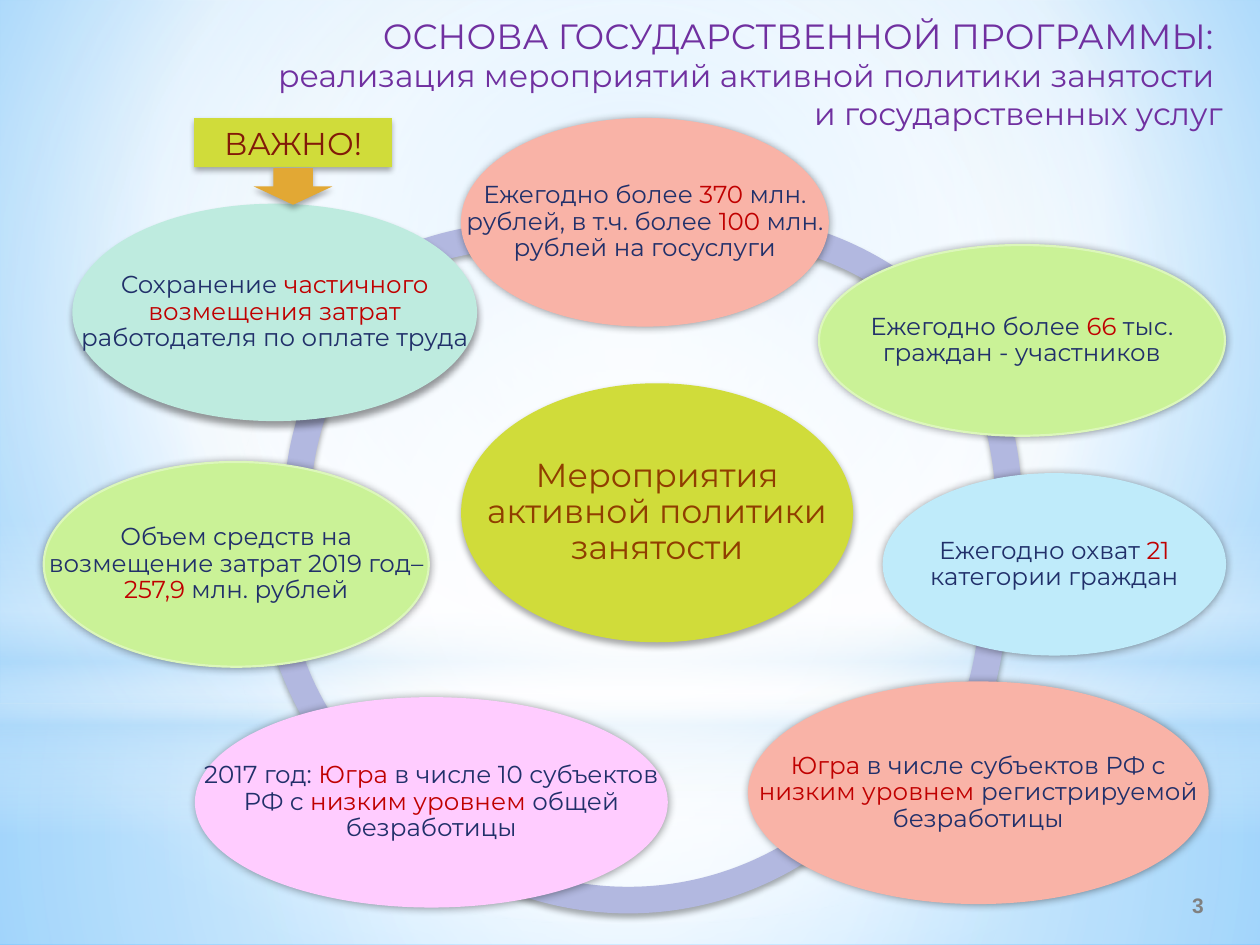
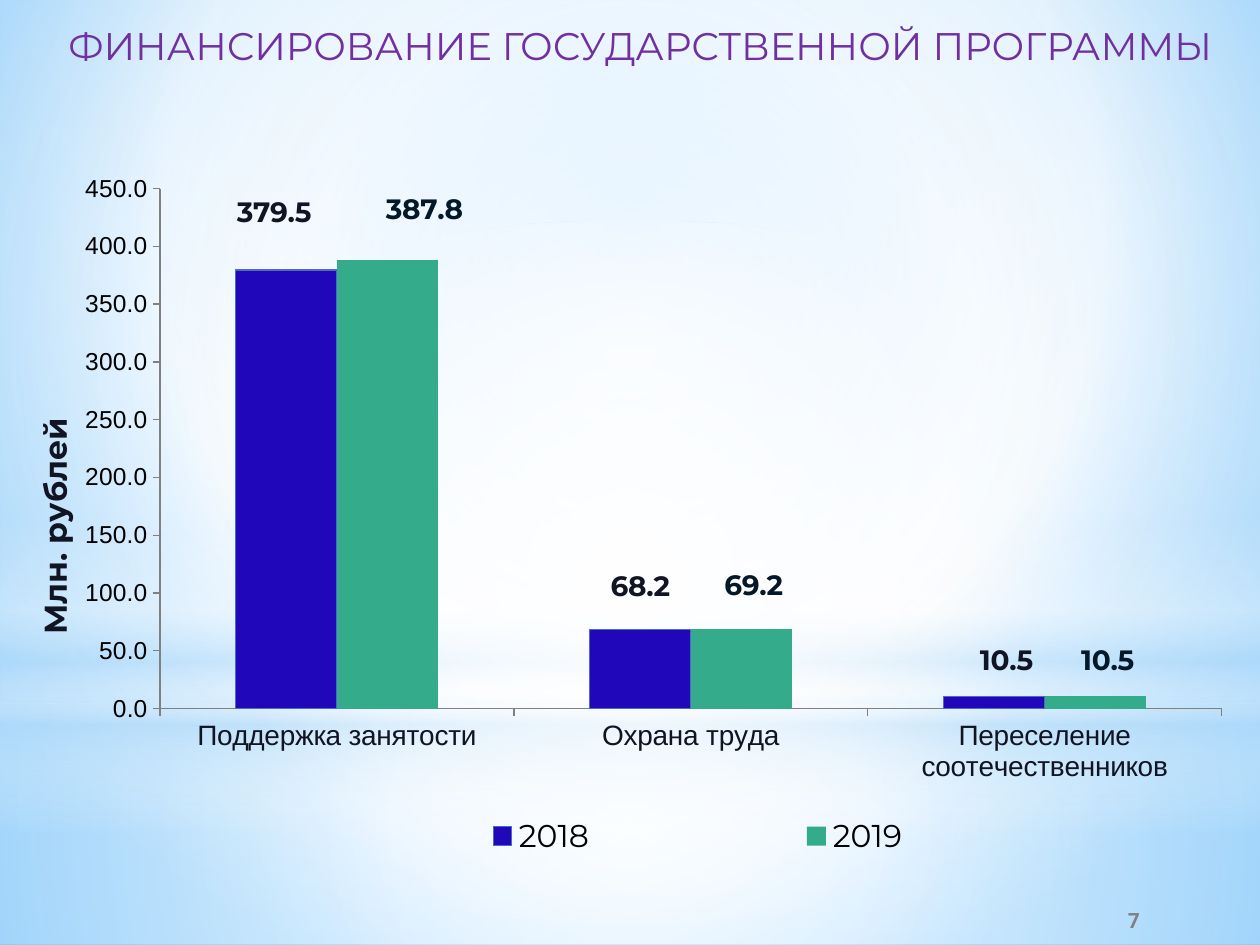
from typing import NamedTuple, Optional

from lxml import etree
from pptx import Presentation
from pptx.chart.data import CategoryChartData
from pptx.dml.color import RGBColor
from pptx.enum.chart import XL_CHART_TYPE, XL_LABEL_POSITION, XL_LEGEND_POSITION, XL_TICK_MARK
from pptx.enum.shapes import MSO_SHAPE
from pptx.enum.text import MSO_ANCHOR, MSO_AUTO_SIZE, PP_ALIGN
from pptx.oxml import parse_xml
from pptx.oxml.ns import nsdecls, qn
from pptx.util import Pt

RECT, OVAL = MSO_SHAPE.RECTANGLE, MSO_SHAPE.OVAL
ARC, DOWN_ARROW = MSO_SHAPE.BLOCK_ARC, MSO_SHAPE.DOWN_ARROW
CENTER, RIGHT = PP_ALIGN.CENTER, PP_ALIGN.RIGHT
TOP, MIDDLE = MSO_ANCHOR.TOP, MSO_ANCHOR.MIDDLE
COLUMNS, TICK_OUT = XL_CHART_TYPE.COLUMN_CLUSTERED, XL_TICK_MARK.OUTSIDE
OUTSIDE, BOTTOM = XL_LABEL_POSITION.OUTSIDE_END, XL_LEGEND_POSITION.BOTTOM

FONT, AXIS_FONT, NUMBER_FONT = "Montserrat", "Arial", "Roboto"
PURPLE, NAVY, RED, GRAY = "7030A0", "21306A", "C00000", "808080"
LIME, RING, INK, BLACK = "D0DC3A", "B2B8E0", "111422", "000000"
NUMBER_FORMAT = "#,##0.0"


class Box(NamedTuple):
    left: float
    top: float
    width: float
    height: float


class Shadow(NamedTuple):
    alpha: int
    blur: float
    dist: float
    angle: int


class Gradient(NamedTuple):
    stops: tuple  # (position %, colour, opacity %)
    focus: Optional[tuple] = None  # left, top, right, bottom %; None runs downwards


class Band(NamedTuple):
    kind: int
    box: Box
    gradient: Gradient


class Bubble(NamedTuple):
    box: Box
    fill: str
    line: str
    text: str  # parts between asterisks take the accent colour
    shadow: Shadow


class Series(NamedTuple):
    name: str
    values: tuple
    fill: str
    line: Optional[str]
    label_color: str
    label_offsets: tuple


DROP = Shadow(32, 3.5, 2.2, 90)
GLOW = Shadow(40, 5, 0, 0)
MIDPOINT = (50, 50, 50, 50)

# Shared background
BACKGROUND = Gradient(((0, "9ED5FF", 100), (60, "FFFFFF", 100), (100, "5BB9FF", 100)),
                      (20, 10, 20, 60))
BANDS = (
    Band(RECT, Box(0, 402, 720, 138), Gradient(
        ((0, "FFFFFF", 91), (37, "FFFFFF", 76), (100, "B4DCFA", 79)), MIDPOINT)),
    Band(RECT, Box(0, 0, 720, 402), Gradient(
        ((0, "FFFFFF", 89), (48, "FFFFFF", 62), (100, "B4DCFA", 79)), MIDPOINT)),
    Band(RECT, Box(0, 297, 720, 180), Gradient(
        ((0, "FFFFFF", 0), (29, "FFFFFF", 30), (45, "B4DCFA", 40),
         (55, "FFFFFF", 26), (65, "B4DCFA", 60), (100, "FFFFFF", 0)))),
    Band(OVAL, Box(0, 126, 720, 402), Gradient(
        ((0, "FFFFFF", 100), (56, "FFFFFF", 0)), MIDPOINT)),
)

# Programme diagram: left, top, start angle, end angle of each ring part,
# every part ending under a bubble
RING_SIZE = 380
RING_PARTS = (
    (111, 127, 230, 290), (162, 103, 170, 215), (148, 126, 132, 175), (169, 142, 40, 115),
    (195, 153, 355, 24), (204, 99, 335, 10), (218, 122, 270, 330),
)
BUBBLES = (
    Bubble(Box(264, 68, 209, 118), "F9B3A7", "F9B3A7",
           "Ежегодно более *370 *млн. рублей, в т.ч. более *100* млн. рублей на госуслуги", GLOW),
    Bubble(Box(468, 140, 232, 109), "CAF297", "DCF7BA",
           "Ежегодно более *66* тыс. граждан - участников", GLOW),
    Bubble(Box(505, 271, 195, 103), "BFEBFA", "BFEBFA",
           "Ежегодно охват *21* категории граждан", GLOW),
    Bubble(Box(428, 390, 262, 126), "F9B3A7", "F9B3A7",
           "*Югра* в числе субъектов РФ с *низким уровнем *регистрируемой безработицы", GLOW),
    Bubble(Box(112, 399, 269, 119), "FFCCFF", "FFCCFF",
           "2017 год: *Югра* в числе 10 субъектов РФ с* низким уровнем *общей безработицы", GLOW),
    Bubble(Box(25, 264, 220, 117), "CAF297", "DCF7BA",
           "Объем средств на возмещение затрат 2019 год– *257,9 *млн. рублей", GLOW),
    Bubble(Box(42, 117, 230, 123), "BEEBDF", "BEEBDF",
           "Сохранение *частичного возмещения затрат *работодателя по оплате труда",
           Shadow(40, 4, 3, 90)),
)

# Funding chart
CATEGORIES = ("Поддержка занятости", "Охрана труда", "Переселение соотечественников")
SERIES = (
    Series("2018", (379.5, 68.2, 10.5), "2007B9", "4E67C8", INK,
           ((-0.01, -0.05), (0, -0.03), (0.01, -0.02))),
    Series("2019", (387.8, 69.2, 10.5), "34AC8B", None, "031828",
           ((0.03, -0.04), (0.01, -0.03), (0.01, -0.02))),
)


def rgb(color: str) -> RGBColor:
    return RGBColor.from_string(color)


def gradient_xml(gradient: Gradient) -> etree._Element:
    stops = "".join(
        f'<a:gs pos="{pos * 1000}"><a:srgbClr val="{color}"><a:alpha val="{alpha * 1000}"/>'
        "</a:srgbClr></a:gs>" for pos, color, alpha in gradient.stops)
    if gradient.focus:
        sides = " ".join(f'{k}="{v * 1000}"' for k, v in zip("ltrb", gradient.focus))
        course = f'<a:path path="circle"><a:fillToRect {sides}/></a:path>'
    else:
        course = '<a:lin ang="5400000" scaled="0"/>'
    return parse_xml(f'<a:gradFill {nsdecls("a")} rotWithShape="1">'
                     f"<a:gsLst>{stops}</a:gsLst>{course}</a:gradFill>")


def apply_gradient(fill, holder, gradient: Gradient) -> None:
    fill.solid()
    holder.replace(holder.find(qn("a:solidFill")), gradient_xml(gradient))


def format_font(font, size: float, color: str, name: str = FONT, bold: bool = False) -> None:
    font.size, font.name, font.bold = Pt(size), name, bold
    font.color.rgb = rgb(color)


def write_text(p, text: str, *, size: float, color: str, accent: str = RED, font: str = FONT,
               bold: bool = False, align=CENTER, spacing: float = 1.0) -> None:
    p.alignment, p.line_spacing = align, spacing
    for i, part in enumerate(text.split("*")):
        if part:
            r = p.add_run()
            r.text = part
            format_font(r.font, size, accent if i % 2 else color, font, bold)


def add_label(slide, box: Box, text: str, *, inset: Optional[float] = None, **style) -> None:
    tf = slide.shapes.add_textbox(*map(Pt, box)).text_frame
    tf.word_wrap, tf.vertical_anchor = True, MIDDLE
    if inset is not None:
        tf.margin_left = tf.margin_right = tf.margin_top = tf.margin_bottom = Pt(inset)
    write_text(tf.paragraphs[0], text, **style)


def add_shape(slide, kind, box: Box, fill: str, line: Optional[str] = None,
              shadow: Optional[Shadow] = None):
    sp = slide.shapes.add_shape(kind, *map(Pt, box))
    sp.fill.solid()
    sp.fill.fore_color.rgb = rgb(fill)
    if line:
        sp.line.color.rgb, sp.line.width = rgb(line), Pt(1.25)
    else:
        sp.line.fill.background()
    sp.shadow.inherit = False
    if shadow:
        sp.element.spPr.find(qn("a:effectLst")).append(parse_xml(
            f'<a:outerShdw {nsdecls("a")} blurRad="{Pt(shadow.blur)}" dist="{Pt(shadow.dist)}" '
            f'dir="{shadow.angle * 60000}" rotWithShape="0"><a:srgbClr val="{BLACK}">'
            f'<a:alpha val="{shadow.alpha * 1000}"/></a:srgbClr></a:outerShdw>'))
    return sp


def add_background(prs, slide) -> None:
    """Draw the bands on a slide and move them to the back of the master."""
    master = prs.slide_master
    fill = master.background.fill
    fill.solid()
    apply_gradient(fill, master.element.find(".//" + qn("p:bgPr")), BACKGROUND)
    for i, band in enumerate(BANDS):
        sp = add_shape(slide, band.kind, band.box, "FFFFFF")
        apply_gradient(sp.fill, sp.element.spPr, band.gradient)
        sp.element.nvSpPr.cNvPr.set("id", str(100 + i))
        master.shapes.element.insert(2 + i, sp.element)


def set_title(slide, box: Box, lines: tuple) -> None:
    title = slide.shapes.title
    title.left, title.top, title.width, title.height = map(Pt, box)
    tf = title.text_frame
    tf.word_wrap, tf.vertical_anchor, tf.auto_size = True, TOP, MSO_AUTO_SIZE.NONE
    for i, (text, size) in enumerate(lines):
        p = tf.add_paragraph() if i else tf.paragraphs[0]
        write_text(p, text, size=size, color=PURPLE, align=RIGHT)


def add_page_number(slide, box: Box, number: str, font: str) -> None:
    add_label(slide, box, number, size=12, color=GRAY, font=font, bold=True)


def build_programme(slide) -> None:
    set_title(slide, Box(77, 4.5, 629, 75), (
        ("ОСНОВА ГОСУДАРСТВЕННОЙ ПРОГРАММЫ: ", 20),
        ("реализация мероприятий активной политики занятости ", 18),
        ("и государственных услуг", 18)))
    # Ring
    for left, top, start, end in RING_PARTS:
        arc = add_shape(slide, ARC, Box(left, top, RING_SIZE, RING_SIZE), RING, shadow=DROP)
        for i, value in enumerate((start * 0.6, end * 0.6, 0.04)):
            arc.adjustments[i] = value
    # Hub and bubbles
    hub = Box(263.5, 219, 224, 148)
    add_shape(slide, OVAL, hub, LIME, shadow=DROP)
    add_label(slide, hub, "Мероприятия активной политики занятости",
              inset=2, size=19, color="903E00", spacing=0.9)
    for bubble in BUBBLES:
        add_shape(slide, OVAL, bubble.box, bubble.fill, bubble.line, bubble.shadow)
        add_label(slide, bubble.box, bubble.text, inset=1.5, size=14, color=NAVY, spacing=0.9)
    # Callout
    tf = add_shape(slide, RECT, Box(111, 67.5, 113, 28), LIME, shadow=DROP).text_frame
    tf.vertical_anchor = MIDDLE
    write_text(tf.paragraphs[0], "ВАЖНО!", size=18, color="821A08")
    add_shape(slide, DOWN_ARROW, Box(145, 96, 45, 21), "E2A834", shadow=DROP)
    add_page_number(slide, Box(649, 502.5, 71, 29), "3", AXIS_FONT)


def set_layout(parent, index: int, inner: bool = False, edge: bool = True, **place) -> None:
    """Place a chart part by fractions of the chart area."""
    for old in parent.findall(qn("c:layout")):
        parent.remove(old)
    target = '<c:layoutTarget val="inner"/>' if inner else ""
    modes = '<c:xMode val="edge"/><c:yMode val="edge"/>' if edge else ""
    values = "".join(f'<c:{k} val="{v}"/>' for k, v in place.items())
    parent.insert(index, parse_xml(
        f'<c:layout {nsdecls("c")}><c:manualLayout>{target}{modes}{values}'
        "</c:manualLayout></c:layout>"))


def build_funding(slide) -> None:
    set_title(slide, Box(20, 9, 680, 60), (("ФИНАНСИРОВАНИЕ ГОСУДАРСТВЕННОЙ ПРОГРАММЫ", 22),))
    data = CategoryChartData(number_format=NUMBER_FORMAT)
    data.categories = CATEGORIES
    for series in SERIES:
        data.add_series(series.name, series.values)
    chart = slide.shapes.add_chart(COLUMNS, *map(Pt, Box(8.5, 82.5, 703, 414)), data).chart
    format_font(chart.font, 18, BLACK, NUMBER_FONT)
    chart.has_title = False
    plot = chart.plots[0]
    plot.gap_width, plot.overlap, plot.vary_by_categories = 150, 0, False

    # Columns and their labels, without leader lines
    for ser, series in zip(plot.series, SERIES):
        ser.format.fill.solid()
        ser.format.fill.fore_color.rgb = rgb(series.fill)
        if series.line:
            ser.format.line.color.rgb, ser.format.line.width = rgb(series.line), Pt(0.75)
        labels = ser.data_labels
        labels.show_value, labels.position = True, OUTSIDE
        labels.number_format, labels.number_format_is_linked = NUMBER_FORMAT, False
        format_font(labels.font, 16, series.label_color, bold=True)
        for i in range(len(CATEGORIES)):
            label = ser.points[i].data_label
            label.position = OUTSIDE
            format_font(label.font, 16, series.label_color, bold=True)
    offsets = [offset for series in SERIES for offset in series.label_offsets]
    for label, (x, y) in zip(chart.element.findall(".//" + qn("c:dLbl")), offsets):
        set_layout(label, 1, edge=False, x=x, y=y)
    for leader in chart.element.findall(".//" + qn("c:showLeaderLines")):
        leader.set("val", "0")

    # Axes
    cat, val = chart.category_axis, chart.value_axis
    for axis, size, color in ((cat, 16, INK), (val, 14, BLACK)):
        axis.major_tick_mark = TICK_OUT
        axis.has_major_gridlines = False
        axis.format.line.color.rgb = rgb(GRAY)
        axis.format.line.width = Pt(0.75)
        format_font(axis.tick_labels.font, size, color, AXIS_FONT)
    val.minimum_scale, val.maximum_scale, val.major_unit = 0, 450, 50
    val.tick_labels.number_format = NUMBER_FORMAT
    val.tick_labels.number_format_is_linked = False
    write_text(val.axis_title.text_frame.paragraphs[0], "Млн. рублей",
               size=18, color=INK, bold=True)

    # Legend and placement
    chart.has_legend = True
    chart.legend.position, chart.legend.include_in_layout = BOTTOM, False
    format_font(chart.legend.font, 18, BLACK)
    set_layout(chart.element.find(".//" + qn("c:plotArea")), 0, inner=True,
               x=0.118, y=0.061, w=0.863, h=0.718)
    set_layout(chart.element.find(".//" + qn("c:valAx") + "/" + qn("c:title")), 1, x=0.01, y=0.37)
    set_layout(chart.element.find(".//" + qn("c:legend")), 1, x=0.22, y=0.92, w=0.67, h=0.07)
    add_page_number(slide, Box(576, 511, 144, 29), "7", NUMBER_FONT)


def main() -> None:
    prs = Presentation()
    prs.slide_width, prs.slide_height = Pt(720), Pt(540)
    title_only = prs.slide_layouts[5]
    programme, funding = (prs.slides.add_slide(title_only) for _ in range(2))
    add_background(prs, programme)
    build_programme(programme)
    build_funding(funding)
    prs.save("out.pptx")


if __name__ == "__main__":
    main()
